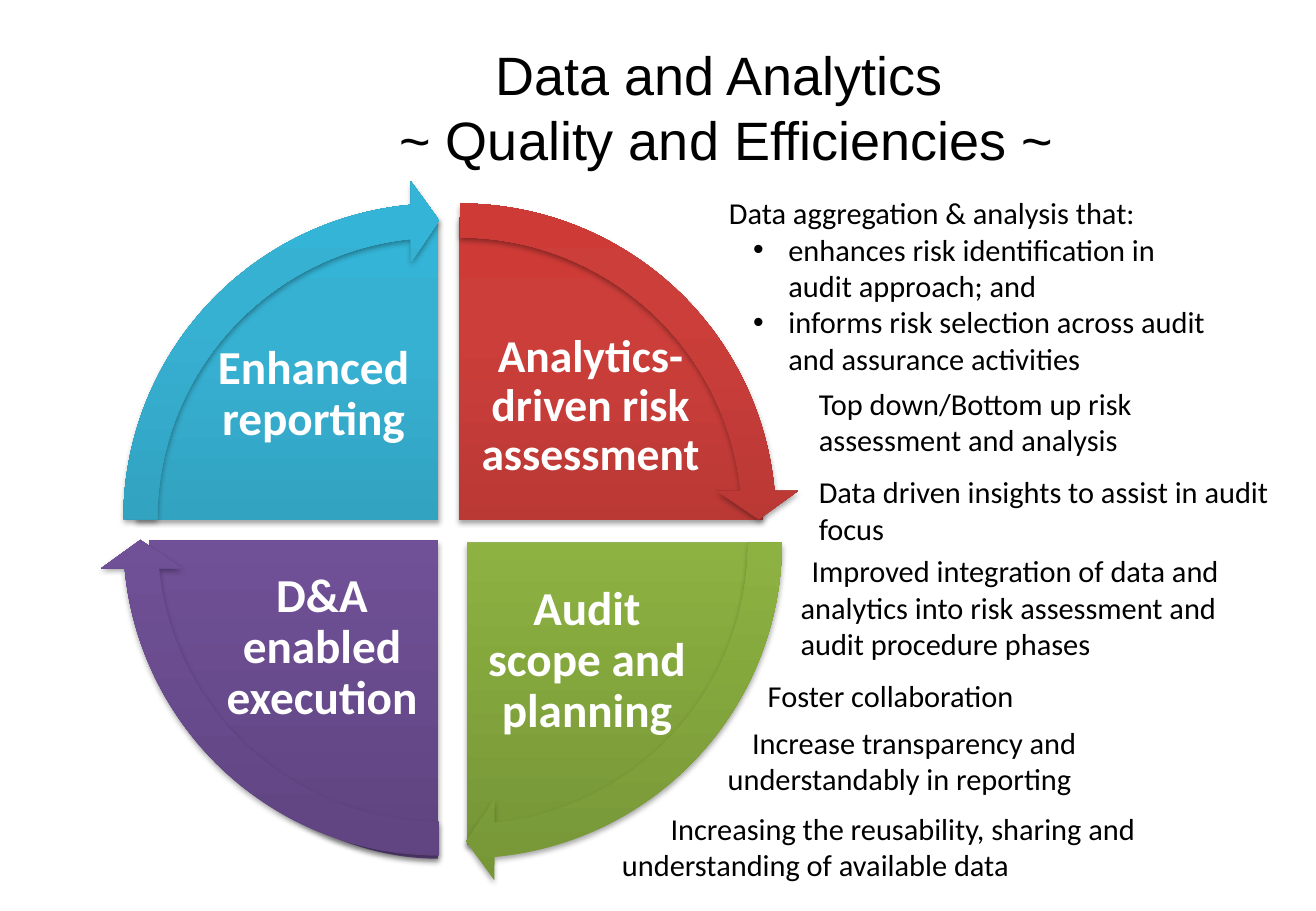
import pptx
import pptx.util
import pptx.dml.color
import pptx.enum.shapes
import pptx.enum.text
import pptx.oxml
import pptx.oxml.ns

SCALE = 9144
TURN, QUARTER = 216, 54
SHAPE = pptx.enum.shapes.MSO_SHAPE
ALIGN = pptx.enum.text.PP_ALIGN
NS = pptx.oxml.ns.nsdecls("a")


def px(num):
    return pptx.util.Emu(num * SCALE)


def tint(code):
    return pptx.dml.color.RGBColor.from_string(code)


def write(frame, text, first=True, size=18, font="Calibri", color="000000",
          bold=False, align=ALIGN.LEFT, space=1.0, left=0, indent=0, bullet=None):
    para = frame.paragraphs[0] if first else frame.add_paragraph()
    para.text = text
    para.alignment = align
    para.line_spacing = space
    props = para._p.get_or_add_pPr()
    props.set("marL", str(px(left)))
    props.set("indent", str(px(indent)))
    if bullet:
        props.append(pptx.oxml.parse_xml(f'<a:buFont {NS} typeface="Arial"/>'))
        props.append(pptx.oxml.parse_xml(f'<a:buChar {NS} char="{bullet}"/>'))
    for run in para.runs:
        run.font.size = pptx.util.Pt(size)
        run.font.name = font
        run.font.bold = bold
        run.font.color.rgb = tint(color)


class Deck:
    """Holds the style and the current slide."""

    stops = (0, 80, 100)
    white = "FFFFFF"

    def __init__(self, wide, high):
        self.file = pptx.Presentation()
        self.file.slide_width, self.file.slide_height = px(wide), px(high)
        self.slide = self.file.slides.add_slide(self.file.slide_layouts[6])

    def text(self, x, y, w, h):
        frame = self.slide.shapes.add_textbox(*map(px, (x, y, w, h))).text_frame
        frame.word_wrap = True
        return frame

    def label(self, text, size, mid_x, mid_y, wide):
        high = 136
        frame = self.text(mid_x - wide // 2, mid_y - high // 2, wide, high)
        frame.margin_left = frame.margin_right = 0
        frame.margin_top = frame.margin_bottom = 0
        frame.vertical_anchor = pptx.enum.text.MSO_ANCHOR.MIDDLE
        write(frame, text, size=size, color=self.white, bold=True,
              align=ALIGN.CENTER, space=0.9)

    def shape(self, kind, box, adjust, colors):
        shape = self.slide.shapes.add_shape(kind, *map(px, box))
        for spot, value in enumerate(adjust):
            shape.adjustments[spot] = value
        props = shape._element.spPr
        marks = "".join(
            f'<a:gs pos="{stop * 1000}"><a:srgbClr val="{color}"/></a:gs>'
            for stop, color in zip(self.stops, colors))
        props.append(pptx.oxml.parse_xml(
            f'<a:gradFill {NS} rotWithShape="1"><a:gsLst>{marks}</a:gsLst>'
            '<a:lin ang="16200000" scaled="0"/></a:gradFill>'))
        shape.line.fill.background()
        props.append(pptx.oxml.parse_xml(
            f'<a:effectLst {NS}><a:outerShdw blurRad="40000" dist="23000" '
            'dir="5400000" rotWithShape="0"><a:srgbClr val="000000">'
            '<a:alpha val="35000"/></a:srgbClr></a:outerShdw></a:effectLst>'))

    def wedge(self, box, start, colors):
        self.shape(SHAPE.PIE, box, (start, (start + QUARTER) % TURN), colors)

    def arrow(self, x, y, start, colors):
        bend = (0.05, 3.28, start + QUARTER - 3.28, start, 0.06)
        self.shape(SHAPE.CIRCULAR_ARROW, (x, y, 559, 559), bend, colors)


PARTS = [
    ("Analytics-driven risk assessment", 27, (486, 335, 190),
     (128, 179, 500, 498), (99, 148), 162, ("9C2F2D", "CB3E3A", "CE3B37")),
    ("Audit scope and planning", 28, (483, 544, 170),
     (135, 198, 498, 498), (104, 167), 0, ("779737", "9BC348", "9DC746")),
    ("D&A enabled execution", 28, (265, 534, 170),
     (123, 183, 476, 524), (82, 165), 54, ("5F4480", "7B58A6", "7C57A8")),
    ("Enhanced reporting", 28, (258, 325, 170),
     (112, 179, 498, 498), (82, 148), 108, ("2A88A2", "37B1D2", "34B4D6")),
]
NOTES = [
    ("Top down/Bottom up risk assessment and analysis", (664, 312, 398, 71), 0),
    ("Data driven insights to assist in audit focus", (664, 385, 403, 71), 0),
    ("Improved integration of data and analytics into risk assessment and "
     "audit procedure phases", (649, 450, 414, 101), 9),
    ("Foster collaboration", (622, 553, 404, 40), 0),
    ("Increase transparency and understandably in reporting",
     (589, 591, 469, 71), 20),
    ("Increasing the reusability, sharing and understanding of available data",
     (502, 662, 542, 71), 40),
]
GOALS = ["enhances risk identification in audit approach; and",
         "informs risk selection across audit and assurance activities"]


def main():
    deck = Deck(1083, 750)
    write(deck.text(171, 29, 854, 118),
          "Data and Analytics \v~ Quality and Efficiencies ~",
          size=32, font="Arial", align=ALIGN.CENTER)
    for text, size, place, box, _, start, colors in PARTS:
        deck.wedge(box, start, colors)
        deck.label(text, size, *place)
    for *_, spot, start, colors in PARTS:
        deck.arrow(*spot, start, colors)
    frame = deck.text(590, 155, 424, 222)
    write(frame, "Data aggregation & analysis that:")
    for goal in GOALS:
        write(frame, goal, first=False, left=49, indent=-29, bullet="•")
    for text, box, indent in NOTES:
        write(deck.text(*box), text, indent=indent)
    deck.file.save("out.pptx")


if __name__ == "__main__":
    main()
